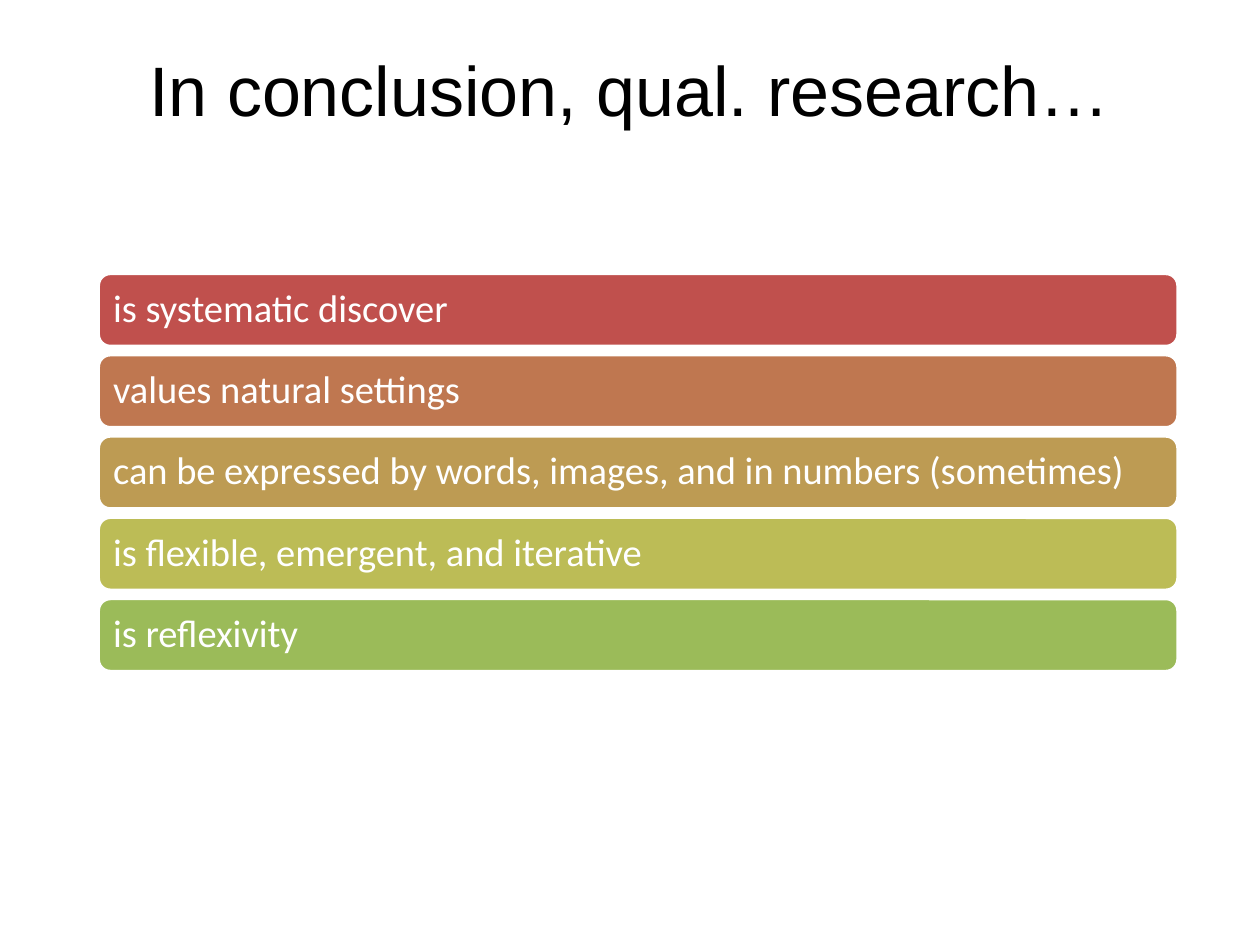
from pptx import Presentation
from pptx.dml.color import RGBColor
from pptx.enum import shapes, text
from pptx.util import Inches, Pt

TITLE = "In conclusion, qual. research…"
POINTS = [
    ("is systematic discover", "C0504D"),
    ("values natural settings", "BF7750"),
    ("can be expressed by words, images, and in numbers (sometimes)", "BD9B53"),
    ("is flexible, emergent, and iterative", "BCBC56"),
    ("is reflexivity", "9BBB59"),
]
THEME = {
    "title": {"name": "Arial", "size": 40, "color": "000000"},
    "point": {"name": "Calibri", "size": 22, "color": "FFFFFF"},
    "outline": "FFFFFF",
}
LEFT, TOP, WIDTH, HEIGHT = 0.78, 2.17, 8.57, 0.58
PITCH = 0.645


def write(box, words, style, align, inset):
    frame = box.text_frame
    frame.word_wrap = True
    frame.auto_size = text.MSO_AUTO_SIZE.NONE
    frame.vertical_anchor = text.MSO_ANCHOR.MIDDLE
    frame.margin_left = frame.margin_right = Inches(inset)
    frame.margin_top = frame.margin_bottom = Inches(inset)
    frame.text = words
    para = frame.paragraphs[0]
    para.alignment = align
    para.font.name = style["name"]
    para.font.size = Pt(style["size"])
    para.font.color.rgb = RGBColor.from_string(style["color"])
    return para


def add_bar(page, top, words, color):
    bar = page.shapes.add_shape(
        shapes.MSO_SHAPE.ROUNDED_RECTANGLE,
        Inches(LEFT), Inches(top), Inches(WIDTH), Inches(HEIGHT))
    bar.shadow.inherit = False
    bar.fill.solid()
    bar.fill.fore_color.rgb = RGBColor.from_string(color)
    bar.line.color.rgb = RGBColor.from_string(THEME["outline"])
    bar.line.width = Pt(2)
    para = write(bar, words, THEME["point"], text.PP_ALIGN.LEFT, 0.09)
    para.line_spacing = 0.9


def main():
    deck = Presentation()
    deck.slide_width, deck.slide_height = Inches(10), Inches(7.5)
    page = deck.slides.add_slide(deck.slide_layouts[5])

    title = page.shapes.title
    title.left, title.top = Inches(LEFT), Inches(0.24)
    title.width, title.height = Inches(8.43), Inches(0.93)
    write(title, TITLE, THEME["title"], text.PP_ALIGN.CENTER, 0.05)

    for row, (words, color) in enumerate(POINTS):
        add_bar(page, TOP + row * PITCH, words, color)

    deck.save("out.pptx")


if __name__ == "__main__":
    main()
